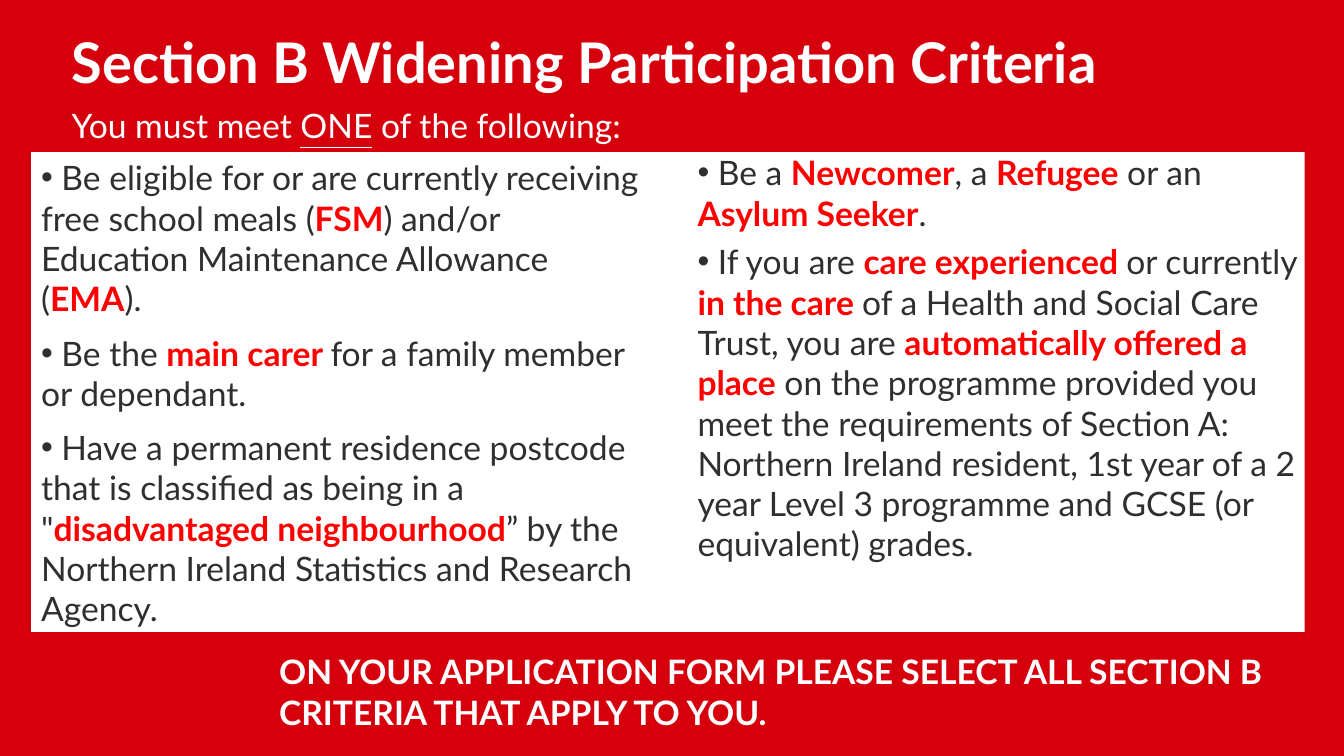
from dataclasses import dataclass

from lxml import etree
from pptx import Presentation
from pptx.dml.color import RGBColor
from pptx.enum import shapes, text
from pptx.oxml import ns
from pptx.util import Inches, Pt

RED = RGBColor(0xD6, 0x00, 0x0D)
WHITE = RGBColor(0xFF, 0xFF, 0xFF)
INK = RGBColor(0x2F, 0x2F, 0x2F)
HIGHLIGHT = RGBColor(0xFF, 0x00, 0x00)
FONT = "Lato"
PANEL_TOP, PANEL_HEIGHT = 1.51, 4.76
TITLE_ONLY = 5


@dataclass(frozen=True)
class Span:
    text: str
    color: RGBColor = INK
    bold: bool = False
    size: int = 24
    underline: bool = False


@dataclass(frozen=True)
class Para:
    spans: list[Span]
    before: int = 0
    after: int = 0
    line: float = 1.0
    bullet: bool = False


def key(words: str) -> Span:
    return Span(words, HIGHLIGHT, bold=True)


def add_bullet(para) -> None:
    properties = para._p.get_or_add_pPr()
    properties.set("marL", "0")
    properties.set("indent", "0")
    etree.SubElement(properties, ns.qn("a:buFont")).set("typeface", "Arial")
    etree.SubElement(properties, ns.qn("a:buChar")).set("char", "•")


def write(shape, paras: list[Para]) -> None:
    frame = shape.text_frame
    frame.word_wrap = True
    frame.auto_size = text.MSO_AUTO_SIZE.NONE
    frame.vertical_anchor = text.MSO_ANCHOR.TOP
    for index, item in enumerate(paras):
        para = frame.add_paragraph() if index else frame.paragraphs[0]
        if item.bullet:
            add_bullet(para)
        para.alignment = text.PP_ALIGN.LEFT
        para.line_spacing = item.line
        para.space_before = Pt(item.before if index else 0)
        para.space_after = Pt(item.after)
        for span in item.spans:
            run = para.add_run()
            run.text = span.text
            run.font.name = FONT
            run.font.size = Pt(span.size)
            run.font.bold = span.bold
            run.font.underline = span.underline
            run.font.color.rgb = span.color


def add_panel(page, left: float, width: float):
    panel = page.shapes.add_shape(
        shapes.MSO_SHAPE.RECTANGLE,
        Inches(left), Inches(PANEL_TOP), Inches(width), Inches(PANEL_HEIGHT))
    panel.shadow.inherit = False
    panel.fill.solid()
    panel.fill.fore_color.rgb = WHITE
    panel.line.fill.background()
    return panel


def add_text(page, left: float, top: float, width: float, height: float,
             paras: list[Para]) -> None:
    box = page.shapes.add_textbox(
        Inches(left), Inches(top), Inches(width), Inches(height))
    write(box, paras)


HEADING = [
    Para([Span("Section B Widening Participation Criteria", WHITE, True, 40)], line=0.9),
    Para([Span("You must meet ", WHITE),
          Span("ONE", WHITE, underline=True),
          Span(" of the following:", WHITE)], before=10, line=0.9),
]

LEFT_CRITERIA = [
    [Span(" Be eligible for or are currently receiving free school meals ("),
     key("FSM"),
     Span(") and/or Education Maintenance Allowance ("),
     key("EMA"),
     Span(").")],
    [Span(" Be the "),
     key("main carer "),
     Span("for a family member or dependant.")],
    [Span(' Have a permanent residence postcode that is classified as being in a "'),
     key("disadvantaged neighbourhood"),
     Span("” by the Northern Ireland Statistics and Research Agency.")],
]

RIGHT_CRITERIA = [
    [Span(" Be a "), key("Newcomer"),
     Span(", a "), key("Refugee"),
     Span(" or an "), key("Asylum Seeker"),
     Span(".")],
    [Span(" If you are "),
     key("care experienced "),
     Span("or currently "),
     key("in the care "),
     Span("of a Health and Social Care Trust, you are "),
     key("automatically offered a place"),
     Span(" on the programme provided you meet the requirements of Section A: "
          "Northern Ireland resident, 1st year of a 2 year Level 3 programme "
          "and GCSE (or equivalent) grades.")],
]

REMINDER = [Para([Span(
    "ON YOUR APPLICATION FORM PLEASE SELECT ALL SECTION B CRITERIA THAT APPLY TO YOU.",
    WHITE, bold=True)])]


def main() -> None:
    deck = Presentation()
    deck.slide_width, deck.slide_height = Inches(13.33), Inches(7.5)
    page = deck.slides.add_slide(deck.slide_layouts[TITLE_ONLY])
    page.background.fill.solid()
    page.background.fill.fore_color.rgb = RED

    title = page.shapes.title
    title.left, title.top = Inches(0.61), Inches(0.3)
    title.width, title.height = Inches(11.25), Inches(1.09)
    write(title, HEADING)

    add_text(page, 2.67, 6.41, 10.36, 0.91, REMINDER)
    add_panel(page, 6.45, 6.49)
    add_text(page, 6.82, 1.46, 6.2, 4.83,
             [Para(spans, after=6, bullet=True) for spans in RIGHT_CRITERIA])
    write(add_panel(page, 0.31, 6.29),
          [Para(spans, before=10, bullet=True) for spans in LEFT_CRITERIA])

    deck.save("out.pptx")


if __name__ == "__main__":
    main()
